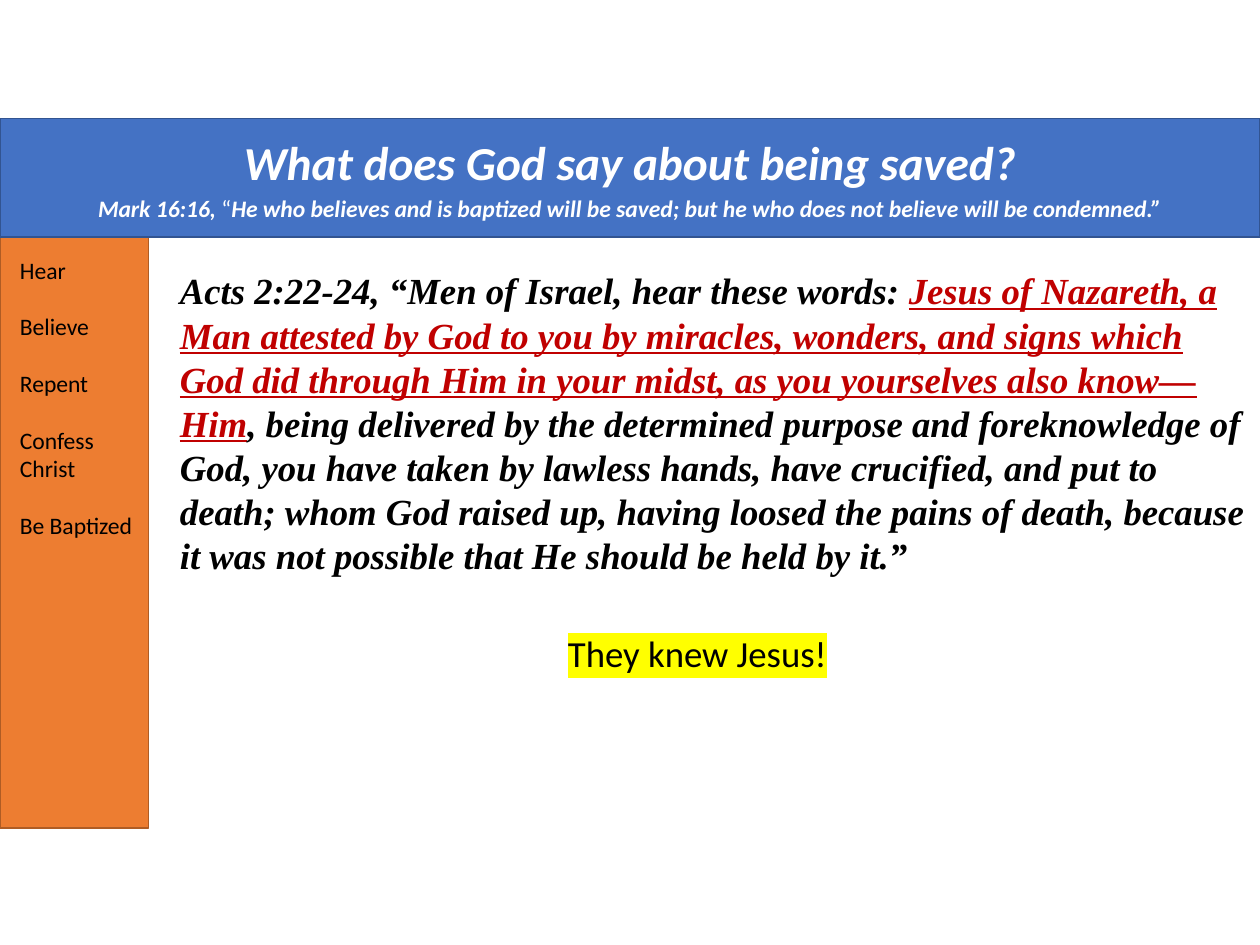
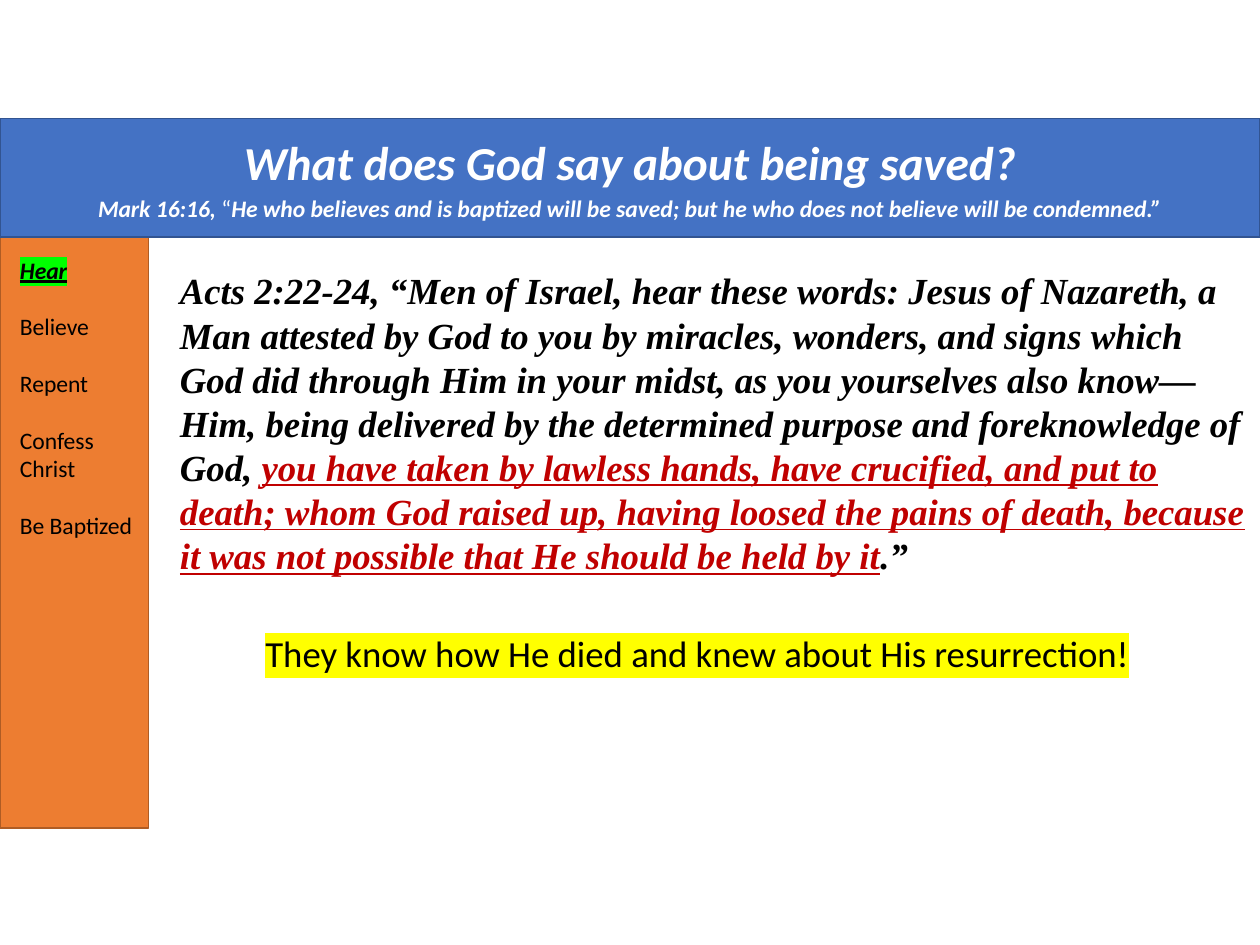
"""Build two Bible-study slides on what God says about being saved."""
import dataclasses

import pptx
import pptx.dml.color
import pptx.enum.shapes
import pptx.enum.text
import pptx.oxml.ns
import pptx.util
from lxml import etree

PX = 9144
ALIGN = pptx.enum.text.PP_ALIGN
STEPS = ["Hear", "Believe", "Repent", "Confess Christ", "Be Baptized"]
VERSE = (
    "Acts 2:22-24, “Men of Israel, hear these words: Jesus of Nazareth, a Man "
    "attested by God to you by miracles, wonders, and signs which God did through "
    "Him in your midst, as you yourselves also know— Him, being delivered by the "
    "determined purpose and foreknowledge of God, you have taken by lawless hands, "
    "have crucified, and put to death; whom God raised up, having loosed the pains "
    "of death, because it was not possible that He should be held by it.”"
)
SLIDES = [
    dict(
        key="Jesus of Nazareth, a Man attested by God to you by miracles, wonders, and "
        "signs which God did through Him in your midst, as you yourselves also know— Him",
        remark="They knew Jesus!",
        current=None,
    ),
    dict(
        key="you have taken by lawless hands, have crucified, and put to death; whom God "
        "raised up, having loosed the pains of death, because it was not possible that "
        "He should be held by it",
        remark="They know how He died and knew about His resurrection!",
        current="Hear",
    ),
]


@dataclasses.dataclass(frozen=True)
class Theme:
    blue: str = "4472C4"
    blue_line: str = "325491"
    orange: str = "ED7D31"
    orange_line: str = "AF5C24"
    ink: str = "000000"
    white: str = "FFFFFF"
    red: str = "C00000"
    yellow: str = "FFFF00"
    green: str = "00FF00"
    sans: str = "Calibri"
    serif: str = "Times New Roman"
    title: float = 27
    body: float = 21
    small: float = 13.5
    step_gap: float = 16.2
    title_gap: float = 2.7


def rgb(value):
    return pptx.dml.color.RGBColor.from_string(value)


def write(p, text, size, color, font, bold=False, italic=False, underline=False, highlight=None):
    r = p.add_run()
    r.text = text
    r.font.size = pptx.util.Pt(size)
    r.font.name = font
    r.font.bold, r.font.italic, r.font.underline = bold, italic, underline
    r.font.color.rgb = rgb(color)
    if highlight:
        qn = pptx.oxml.ns.qn
        mark = etree.Element(qn("a:highlight"))
        etree.SubElement(mark, qn("a:srgbClr"), val=highlight)
        r.font.fill._xPr.find(qn("a:solidFill")).addnext(mark)


class Deck:
    def __init__(self, theme):
        self.theme = theme
        self.prs = pptx.Presentation()
        self.prs.slide_width, self.prs.slide_height = 1000 * PX, 750 * PX
        self.s = None

    def new_slide(self):
        self.s = self.prs.slides.add_slide(self.prs.slide_layouts[6])

    def band(self, x, y, w, h, fill, line):
        kind = pptx.enum.shapes.MSO_SHAPE.RECTANGLE
        sp = self.s.shapes.add_shape(kind, x * PX, y * PX, w * PX, h * PX)
        sp.shadow.inherit = False
        sp.fill.solid()
        sp.fill.fore_color.rgb = rgb(fill)
        sp.line.color.rgb = rgb(line)
        sp.line.width = pptx.util.Pt(1)
        return sp.text_frame

    def text_box(self, x, y, w, h):
        tf = self.s.shapes.add_textbox(x * PX, y * PX, w * PX, h * PX).text_frame
        tf.word_wrap = True
        tf.auto_size = pptx.enum.text.MSO_AUTO_SIZE.SHAPE_TO_FIT_TEXT
        return tf

    def sidebar(self, current):
        t = self.theme
        self.band(0, 188, 118, 469, t.orange, t.orange_line)
        tf = self.text_box(6, 198, 112, 237)
        for i, step in enumerate(STEPS):
            p = tf.add_paragraph() if i else tf.paragraphs[0]
            if i:
                p.space_before = pptx.util.Pt(t.step_gap)
            on = step == current
            write(p, step, t.small, t.ink, t.sans, bold=on, italic=on, underline=on,
                  highlight=t.green if on else None)

    def verse(self, key):
        t = self.theme
        p = self.text_box(133, 208, 867, 257).paragraphs[0]
        for part in VERSE.partition(key):
            on = part == key
            write(p, part, t.body, t.red if on else t.ink, t.serif,
                  bold=True, italic=True, underline=on)

    def remark(self, text):
        t = self.theme
        p = self.text_box(133, 496, 841, 45).paragraphs[0]
        p.alignment = ALIGN.CENTER
        write(p, text, t.body, t.ink, t.sans, highlight=t.yellow)

    def header(self):
        t = self.theme
        tf = self.band(0, 94, 1000, 94, t.blue, t.blue_line)
        tf.word_wrap = True
        tf.vertical_anchor = pptx.enum.text.MSO_ANCHOR.MIDDLE
        title, quote = tf.paragraphs[0], tf.add_paragraph()
        title.alignment = quote.alignment = ALIGN.CENTER
        quote.space_before = pptx.util.Pt(t.title_gap)
        write(title, "What does God say about being saved?", t.title, t.white, t.sans,
              bold=True, italic=True)
        for text, strong in (
            ("Mark 16:16, ", True),
            ("“", False),
            ("He who believes and is baptized will be saved; "
             "but he who does not believe will be condemned.”", True),
        ):
            write(quote, text, t.small, t.white, t.sans, bold=strong, italic=strong)


def main():
    deck = Deck(Theme())
    for content in SLIDES:
        deck.new_slide()
        deck.sidebar(content["current"])
        deck.verse(content["key"])
        deck.remark(content["remark"])
        deck.header()
    deck.prs.save("out.pptx")


if __name__ == "__main__":
    main()
